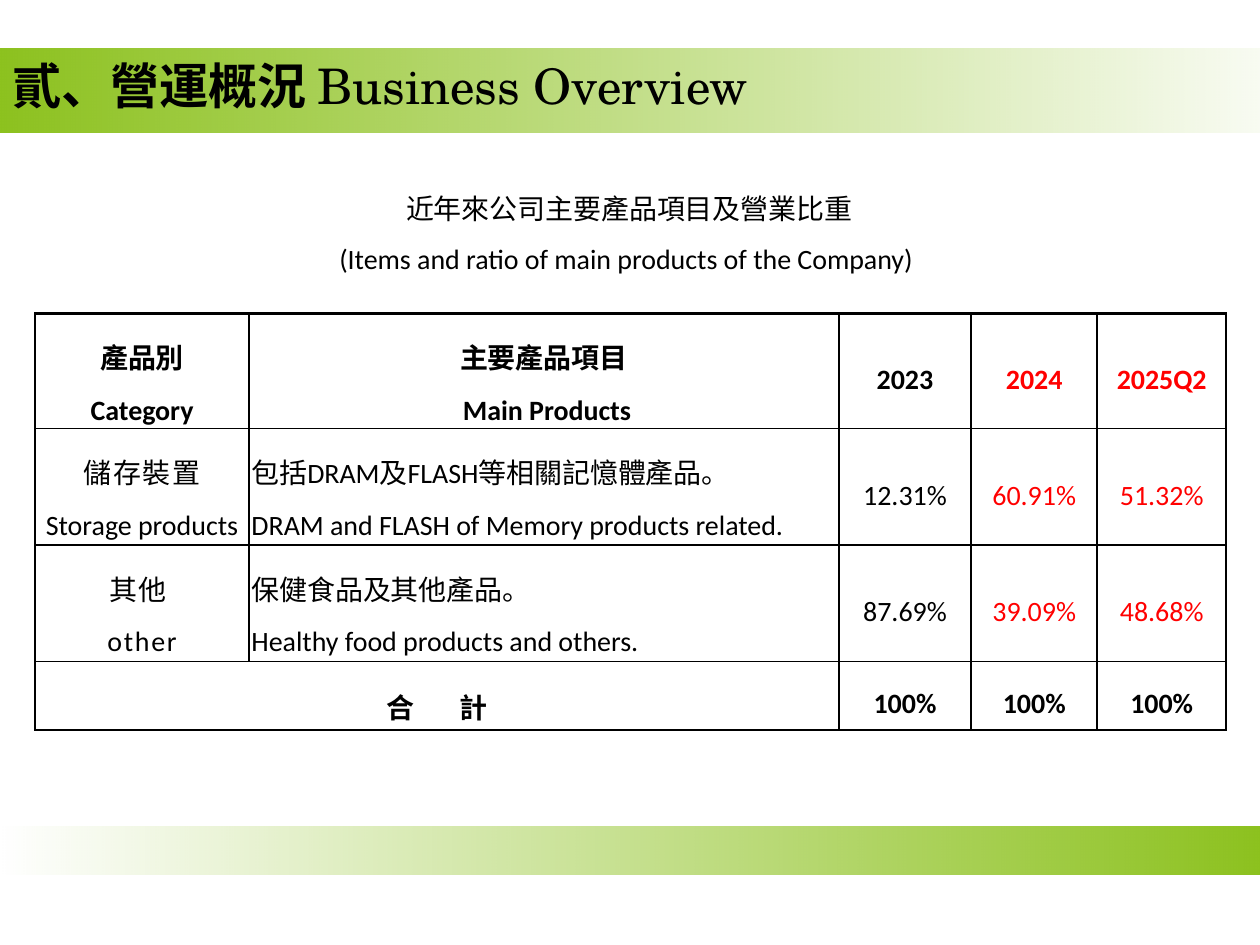
"""Build the business overview slide with its product ratio table."""
from lxml import etree
from pptx import Presentation
from pptx.dml.color import RGBColor
from pptx.enum import shapes, text
from pptx.oxml import ns
from pptx.util import Cm, Pt

GREEN = RGBColor(0x8D, 0xC2, 0x1F)
BLACK = RGBColor(0, 0, 0)
RED = RGBColor(0xFF, 0, 0)
CENTER, LEFT = text.PP_ALIGN.CENTER, text.PP_ALIGN.LEFT

COLUMN_WIDTHS = [4.31, 11.89, 2.67, 2.54, 2.6]
ROW_HEIGHTS = [2.32, 2.35, 2.35, 1.37]
PRODUCT_ROWS = [
    [["產品別", "Category"], ["主要產品項目", " Main Products"], ["2023"], ["2024"], ["2025Q2"]],
    [[("儲存裝置", {"spacing": 1}), "Storage products"],
     ["包括DRAM及FLASH等相關記憶體產品。", "DRAM and FLASH of Memory products related."],
     ["12.31%"], ["60.91%"], ["51.32%"]],
    [[("其他 ", {"spacing": 1}), ("other", {"spacing": 1})],
     ["保健食品及其他產品。", "Healthy food products and others."],
     ["87.69%"], ["39.09%"], ["48.68%"]],
    [[["合", (" ", {"spacing": 22}), "計"]], [], ["100%"], ["100%"], ["100%"]],
]


def add_run(paragraph, words, font="Calibri", size=16, color=BLACK, bold=False, spacing=0):
    """Add one run in the given format."""
    run = paragraph.add_run()
    run.text = words
    run.font.name, run.font.size, run.font.bold = font, Pt(size), bold
    run.font.color.rgb = color
    if spacing:
        run.font._element.set("spc", str(spacing * 100))


def write(frame, lines, align=CENTER, line_spacing=1.5, **style):
    """Fill a frame with one paragraph per line; a line may be a list of runs."""
    frame.word_wrap = True
    frame.vertical_anchor = text.MSO_ANCHOR.MIDDLE
    for number, line in enumerate(lines):
        paragraph = frame.paragraphs[0] if number == 0 else frame.add_paragraph()
        paragraph.alignment, paragraph.line_spacing = align, line_spacing
        paragraph.space_before = Pt(0)
        for part in line if isinstance(line, list) else [line]:
            words, changes = part if isinstance(part, tuple) else (part, {})
            add_run(paragraph, words, **{**style, **changes})


class GreenSlide:
    """Hold the style and the current slide."""

    inset = Cm(0.05)
    outer_line, inner_line = Pt(1.5), Pt(1)

    def __init__(self, deck):
        self.slide = deck.slides.add_slide(deck.slide_layouts[5])

    def band(self, top, height, opacities):
        """Draw a full-width band fading between two opacities in percent."""
        band = self.slide.shapes.add_shape(
            shapes.MSO_SHAPE.RECTANGLE, 0, Cm(top), Cm(25.4), Cm(height))
        band.shadow.inherit = False
        band.line.fill.background()
        band.fill.gradient()
        band.fill.gradient_angle = 0
        for stop, opacity in zip(band.fill.gradient_stops, opacities):
            stop.color.rgb = GREEN
        tints = band._element.spPr.iter(ns.qn("a:srgbClr"))
        for tint, opacity in zip(tints, opacities):
            etree.SubElement(tint, ns.qn("a:alpha"), val=str(opacity * 1000))

    def title(self, runs, left, top, width, height):
        """Place the title placeholder."""
        title = self.slide.shapes.title
        title.left, title.top, title.width, title.height = map(Cm, (left, top, width, height))
        title.text_frame.auto_size = text.MSO_AUTO_SIZE.NONE
        write(title.text_frame, [runs], align=LEFT, line_spacing=0.9,
              font="TeX Gyre Schola", size=28)

    def caption(self, lines, left, top, width, height):
        """Add a centred caption."""
        box = self.slide.shapes.add_textbox(*map(Cm, (left, top, width, height)))
        write(box.text_frame, lines)

    def borders(self, cell, outer_sides):
        """Rule all sides of a cell, thicker on the outer ones."""
        properties = cell._tc.get_or_add_tcPr()
        for side in "LRTB":
            width = self.outer_line if side in outer_sides else self.inner_line
            line = etree.SubElement(properties, ns.qn(f"a:ln{side}"), w=str(width))
            fill = etree.SubElement(line, ns.qn("a:solidFill"))
            etree.SubElement(fill, ns.qn("a:srgbClr"), val=str(BLACK))

    def table(self, rows, left, top):
        """Add the ratio table, with bold first and last rows and red recent years."""
        last_row, last_column = len(rows) - 1, len(COLUMN_WIDTHS) - 1
        table = self.slide.shapes.add_table(
            len(rows), len(COLUMN_WIDTHS), Cm(left), Cm(top),
            Cm(sum(COLUMN_WIDTHS)), Cm(sum(ROW_HEIGHTS))).table
        table.first_row = table.horz_banding = False
        for column, width in zip(table.columns, COLUMN_WIDTHS):
            column.width = Cm(width)
        for row, height in zip(table.rows, ROW_HEIGHTS):
            row.height = Cm(height)
        table.cell(last_row, 0).merge(table.cell(last_row, 1))
        for r, row in enumerate(rows):
            for c, lines in enumerate(row):
                cell = table.cell(r, c)
                sides = {"T": r == 0, "B": r == last_row, "L": c == 0, "R": c == last_column}
                self.borders(cell, [side for side, outer in sides.items() if outer])
                cell.fill.background()
                cell.margin_left = cell.margin_right = self.inset
                cell.margin_top = cell.margin_bottom = self.inset
                cell.vertical_anchor = text.MSO_ANCHOR.MIDDLE
                heading = r in (0, last_row)
                for_recent_year = c >= 3 and r < last_row
                self.cell_text(cell, lines, LEFT if c == 1 and not heading else CENTER,
                               RED if for_recent_year else BLACK, heading)

    def cell_text(self, cell, lines, align, color, bold):
        """Write the lines of one table cell."""
        if lines:
            write(cell.text_frame, lines, align=align, color=color, bold=bold)
            cell.vertical_anchor = text.MSO_ANCHOR.MIDDLE


def main():
    """Build and save the slide."""
    deck = Presentation()
    deck.slide_width, deck.slide_height = Cm(25.4), Cm(19.05)
    overview = GreenSlide(deck)
    overview.band(16.66, 0.97, (0, 100))
    overview.band(0.97, 1.7, (100, 6))
    title = overview.slide.shapes.title._element
    title.getparent().append(title)
    overview.title([("貳、營運概況 ", {"bold": True}), "Business Overview"], 0, 1.12, 20.09, 1.35)
    overview.caption(["近年來公司主要產品項目及營業比重",
                      "(Items and ratio of main products of the Company) "],
                     4.09, 3.53, 17.2, 2.01)
    overview.table(PRODUCT_ROWS, 0.71, 6.32)
    deck.save("out.pptx")


if __name__ == "__main__":
    main()
